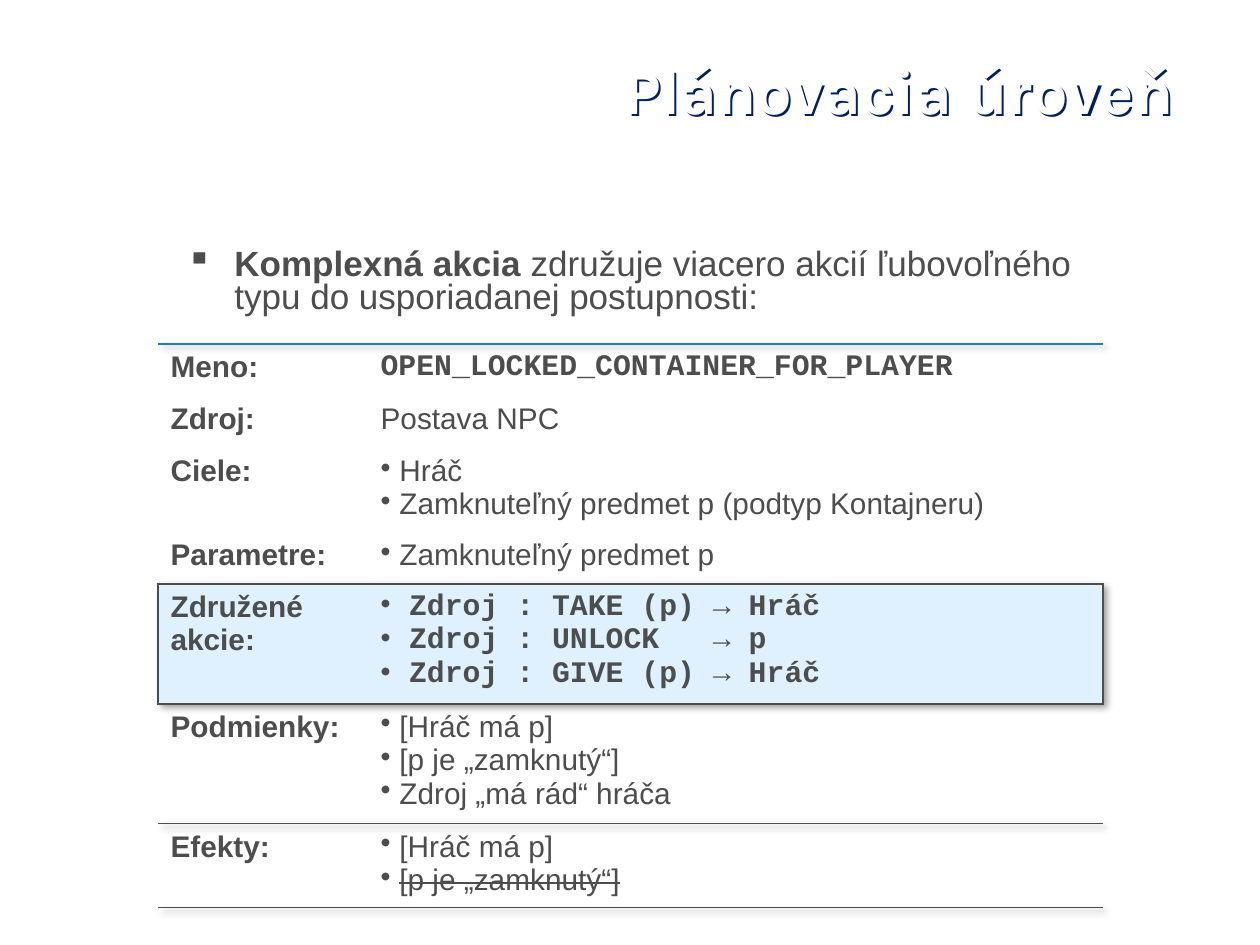
from dataclasses import dataclass

from lxml.etree import SubElement
from pptx import Presentation
from pptx.dml.color import RGBColor
from pptx.enum.text import MSO_ANCHOR as Anchor, PP_ALIGN as Align
from pptx.oxml.ns import qn
from pptx.util import Pt

EMU_PER_PX = 914400 / 126


@dataclass(frozen=True)
class Theme:
    text: str = "4D4D4D"
    white: str = "FFFFFF"
    accent: str = "1C79DA"
    highlight: str = "DFF1FF"
    title_shadow: str = "002060"
    table_shadow: str = "000000"
    title_font: str = "Karla"
    body_font: str = "Arial"
    code_font: str = "Courier New"
    title_size: int = 36
    body_size: int = 20
    table_size: int = 17


THEME = Theme()
NO_TABLE_STYLE = "{2D5ABB26-0587-4C30-8999-92F81FD0307C}"

ROWS = [
    ("Meno:", ["OPEN_LOCKED_CONTAINER_FOR_PLAYER"]),
    ("Zdroj:", ["Postava NPC"]),
    ("Ciele:", [" Hráč", " Zamknuteľný predmet p (podtyp Kontajneru)"]),
    ("Parametre:", [" Zamknuteľný predmet p"]),
    ("Združené akcie:", [" Zdroj : TAKE (p) → Hráč",
                         " Zdroj : UNLOCK   → p",
                         " Zdroj : GIVE (p) → Hráč"]),
    ("Podmienky:", [" [Hráč má p]", " [p je „zamknutý“]", " Zdroj „má rád“ hráča"]),
    ("Efekty:", [" [Hráč má p]", " "]),
]
CODE_ROWS = {0, 4}
PLAIN_ROWS = {0, 1}
HIGHLIGHT_ROW = 4
STRUCK_EFFECT = "[p je „zamknutý“]"
RULES = {
    0: {"T": THEME.accent},
    3: {"B": THEME.text},
    4: {"T": THEME.text, "B": THEME.text},
    5: {"T": THEME.text, "B": THEME.text},
    6: {"T": THEME.text, "B": THEME.text},
}


def px(value):
    return round(value * EMU_PER_PX)


def format_font(font, name, size, color, bold=False):
    font.name = name
    font.size = Pt(size)
    font.bold = bold
    font.color.rgb = RGBColor.from_string(color)


def add_shadow(properties, color, blur, distance, opacity):
    effects = SubElement(properties, qn("a:effectLst"))
    shadow = SubElement(effects, qn("a:outerShdw"), blurRad=str(px(blur)),
                        dist=str(px(distance)), dir="2700000", algn="tl", rotWithShape="0")
    shade = SubElement(shadow, qn("a:srgbClr"), val=color)
    SubElement(shade, qn("a:alpha"), val=str(opacity * 1000))


def add_bullet(paragraph, character, indent=0):
    properties = paragraph._p.get_or_add_pPr()
    properties.set("marL", str(px(indent)))
    properties.set("indent", str(-px(indent)))
    SubElement(properties, qn("a:buChar"), char=character)


def add_text_box(slide, left, top, width, height):
    box = slide.shapes.add_textbox(px(left), px(top), px(width), px(height))
    box.text_frame.word_wrap = True
    return box


def add_title(slide):
    box = add_text_box(slide, 164, 45, 1022, 89)
    box.text_frame.vertical_anchor = Anchor.MIDDLE
    paragraph = box.text_frame.paragraphs[0]
    paragraph.text = "Plánovacia úroveň"
    paragraph.alignment = Align.RIGHT
    format_font(paragraph.runs[0].font, THEME.title_font, THEME.title_size, THEME.white, True)
    add_shadow(box._element.spPr, THEME.title_shadow, 0, 3, 100)


def add_definition(slide):
    box = add_text_box(slide, 174, 243, 932, 616)
    paragraph = box.text_frame.paragraphs[0]
    paragraph.line_spacing = 0.8
    add_bullet(paragraph, "▪", 48)
    paragraph.text = "Komplexná akcia"
    paragraph.add_run().text = " združuje viacero akcií ľubovoľného typu do usporiadanej postupnosti:"
    for run, bold in zip(paragraph.runs, (True, False)):
        format_font(run.font, THEME.body_font, THEME.body_size, THEME.text, bold)


def add_border(cell, side, color):
    line = SubElement(cell._tc.get_or_add_tcPr(), qn(f"a:ln{side}"), w=str(Pt(1)))
    fill = SubElement(line, qn("a:solidFill"))
    SubElement(fill, qn("a:srgbClr"), val=color)


def fill_cell(cell, lines, bulleted, font_name, bold):
    cell.text_frame.text = "\n".join(lines)
    for paragraph in cell.text_frame.paragraphs:
        if bulleted:
            add_bullet(paragraph, "•")
        for run in paragraph.runs:
            format_font(run.font, font_name, THEME.table_size, THEME.text, bold)


def style_cell(cell, row, column):
    borders = dict(RULES.get(row, {}))
    if row == HIGHLIGHT_ROW:
        borders["LR"[column]] = THEME.text
    for side in "LRTB":
        if side in borders:
            add_border(cell, side, borders[side])
    if row == HIGHLIGHT_ROW:
        cell.fill.solid()
        cell.fill.fore_color.rgb = RGBColor.from_string(THEME.highlight)
    else:
        cell.fill.background()


def add_struck_effect(cell):
    run = cell.text_frame.paragraphs[-1].add_run()
    run.text = STRUCK_EFFECT
    format_font(run.font, THEME.body_font, THEME.table_size, THEME.text)
    run.font._element.set("strike", "sngStrike")


def add_action_table(slide):
    row_height = 52
    frame = slide.shapes.add_table(len(ROWS), 2, px(158), px(344),
                                   px(945), px(row_height * len(ROWS)))
    table = frame.table
    table.first_row = table.horz_banding = False
    properties = table._tbl.tblPr
    properties.find(qn("a:tableStyleId")).text = NO_TABLE_STYLE
    add_shadow(properties, THEME.table_shadow, 6, 5, 40)
    properties.insert(0, properties[-1])
    for column, width in zip(table.columns, (210, 735)):
        column.width = px(width)
    for row, (label, lines) in enumerate(ROWS):
        table.rows[row].height = px(row_height)
        is_code = row in CODE_ROWS
        value_font = THEME.code_font if is_code else THEME.body_font
        fill_cell(table.cell(row, 0), [label], False, THEME.body_font, True)
        fill_cell(table.cell(row, 1), lines, row not in PLAIN_ROWS, value_font, is_code)
        for column in range(2):
            style_cell(table.cell(row, column), row, column)
    add_struck_effect(table.cell(len(ROWS) - 1, 1))


def main():
    presentation = Presentation()
    presentation.slide_width = px(1260)
    presentation.slide_height = px(945)
    slide = presentation.slides.add_slide(presentation.slide_layouts[6])
    add_title(slide)
    add_definition(slide)
    add_action_table(slide)
    presentation.save("out.pptx")


if __name__ == "__main__":
    main()
